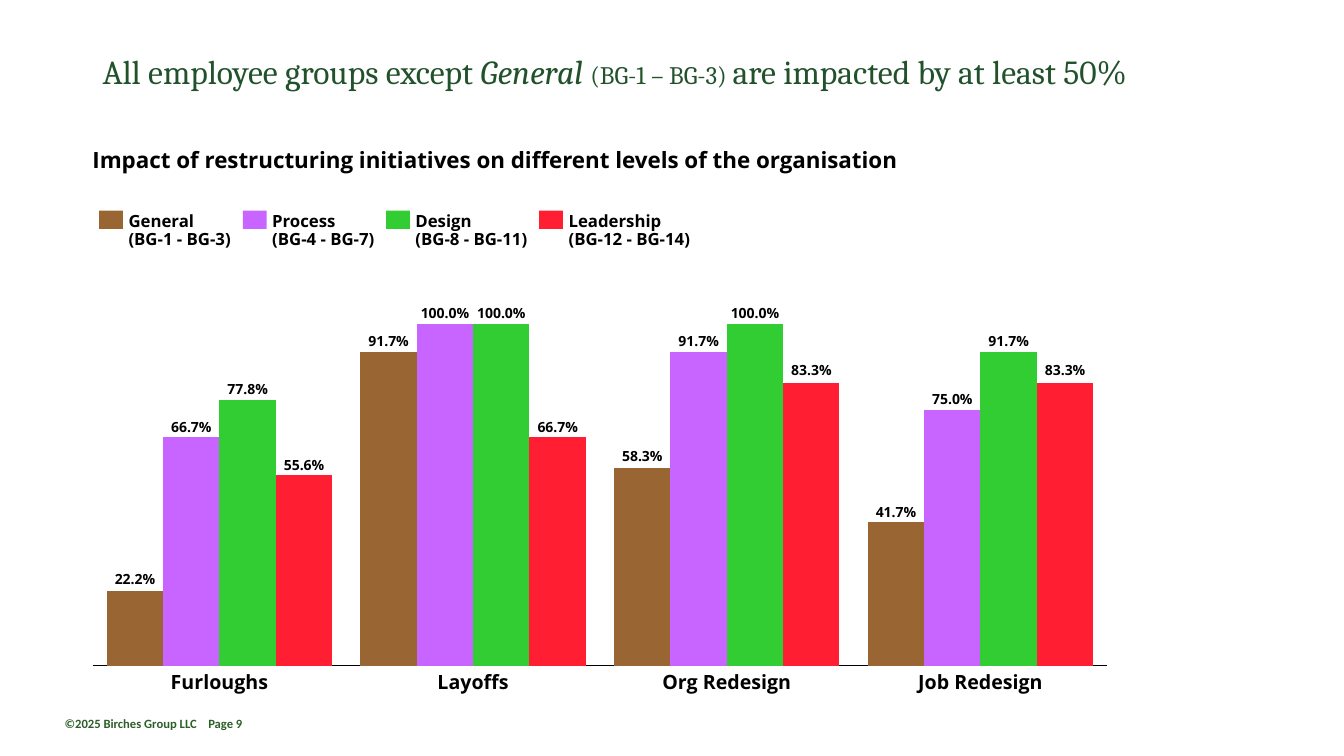
from lxml import etree
from pptx import Presentation
from pptx.chart.data import CategoryChartData
from pptx.dml.color import RGBColor
from pptx.enum.chart import XL_CHART_TYPE, XL_TICK_LABEL_POSITION, XL_TICK_MARK
from pptx.enum.shapes import MSO_SHAPE
from pptx.enum.text import MSO_ANCHOR, PP_ALIGN
from pptx.oxml.ns import qn
from pptx.util import Cm, Pt

COLUMNS = XL_CHART_TYPE.COLUMN_CLUSTERED
NO_LABELS = XL_TICK_LABEL_POSITION.NONE
NO_TICKS = XL_TICK_MARK.NONE
RECTANGLE = MSO_SHAPE.RECTANGLE
TOP, MIDDLE, BOTTOM = MSO_ANCHOR.TOP, MSO_ANCHOR.MIDDLE, MSO_ANCHOR.BOTTOM
LEFT, CENTER = PP_ALIGN.LEFT, PP_ALIGN.CENTER

COLORS = {
    "title": "22522C",
    "footer": "2C5E28",
    "text": "000000",
    "General": "996633",
    "Process": "C864FF",
    "Design": "32CD32",
    "Leadership": "FF1E32",
}
INITIATIVES = ["Furloughs", "Layoffs", "Org Redesign", "Job Redesign"]
IMPACT = {
    "General": [22.2, 91.7, 58.3, 41.7],
    "Process": [66.7, 100, 91.7, 75],
    "Design": [77.8, 100, 100, 91.7],
    "Leadership": [55.6, 66.7, 83.3, 83.3],
}
LEGEND = [
    ("General", "BG-1 - BG-3", 2.5, 2.6),
    ("Process", "BG-4 - BG-7", 6.12, 2.6),
    ("Design", "BG-8 - BG-11", 9.73, 2.9),
    ("Leadership", "BG-12 - BG-14", 13.59, 3.15),
]

CHART_BOX = (2.1, 7.95, 26.04, 9.07)
PLOT = {"x": 0.009, "y": 0.025, "w": 0.982, "h": 0.949}
GAP_WIDTH = 50


class ImpactSlide:
    def __init__(self, presentation):
        self.slide = presentation.slides.add_slide(presentation.slide_layouts[5])
        self.heading_font = "Cambria"
        self.body_font = "Open Sans"
        self.footer_font = "Calibri"

    def color(self, name):
        return RGBColor.from_string(COLORS[name])

    def title(self, box, pieces):
        shape = self.slide.shapes.title
        shape.left, shape.top, shape.width, shape.height = map(Cm, box)
        shape.text_frame.vertical_anchor = MIDDLE
        paragraph = shape.text_frame.paragraphs[0]
        paragraph.alignment = LEFT
        paragraph.line_spacing = 0.9
        paragraph.font.name = self.heading_font
        paragraph.font.color.rgb = self.color("title")
        for text, size, italic in pieces:
            run = paragraph.add_run()
            run.text = text
            run.font.size = Pt(size)
            run.font.italic = italic

    def text(self, text, box, size, align=LEFT, anchor=TOP):
        frame = self.slide.shapes.add_textbox(*map(Cm, box)).text_frame
        frame.margin_left = frame.margin_right = 0
        frame.margin_top = frame.margin_bottom = 0
        frame.vertical_anchor = anchor
        frame.word_wrap = False
        paragraph = frame.paragraphs[0]
        paragraph.text = text
        paragraph.alignment = align
        paragraph.line_spacing = 0.9
        paragraph.font.name = self.body_font
        paragraph.font.size = Pt(size)
        paragraph.font.bold = True
        paragraph.font.color.rgb = self.color("text")

    def footer(self, text, box, tab):
        frame = self.slide.shapes.add_textbox(*map(Cm, box)).text_frame
        frame.word_wrap = True
        paragraph = frame.paragraphs[0]
        paragraph.text = text
        properties = paragraph._p.get_or_add_pPr()
        tabs = etree.SubElement(properties, qn("a:tabLst"))
        etree.SubElement(tabs, qn("a:tab"), pos=str(Cm(tab)), algn="l")
        paragraph.font.name = self.footer_font
        paragraph.font.size = Pt(9)
        paragraph.font.bold = True
        paragraph.font.color.rgb = self.color("footer")

    def swatch(self, group, box):
        shape = self.slide.shapes.add_shape(RECTANGLE, *map(Cm, box))
        shape.shadow.inherit = False
        shape.fill.solid()
        shape.fill.fore_color.rgb = self.color(group)
        shape.line.fill.background()

    def chart(self, box):
        data = CategoryChartData()
        data.categories = INITIATIVES
        for group, values in IMPACT.items():
            data.add_series(group, [round(value) for value in values])
        chart = self.slide.shapes.add_chart(COLUMNS, *map(Cm, box), data).chart
        chart.has_legend = False
        chart.has_title = False
        chart.font.name = self.footer_font
        chart.font.size = Pt(10)
        chart.font.color.rgb = self.color("text")

        plot = chart.plots[0]
        plot.gap_width = GAP_WIDTH
        plot.overlap = 0
        plot.vary_by_categories = False
        for series in plot.series:
            series.format.fill.solid()
            series.format.fill.fore_color.rgb = self.color(series.name)

        value_axis = chart.value_axis
        value_axis.minimum_scale = 0
        value_axis.maximum_scale = 100
        value_axis.has_major_gridlines = False
        value_axis.visible = False
        category_axis = chart.category_axis
        category_axis.tick_label_position = NO_LABELS
        category_axis.major_tick_mark = NO_TICKS
        category_axis.format.line.width = Pt(0.75)
        category_axis.format.line.color.rgb = self.color("text")
        self.place_plot(chart)

    def place_plot(self, chart):
        area = chart._chartSpace.find(".//" + qn("c:plotArea"))
        layout = area.find(qn("c:layout"))
        if layout is None:
            layout = etree.Element(qn("c:layout"))
            area.insert(0, layout)
        manual = etree.SubElement(layout, qn("c:manualLayout"))
        settings = {"layoutTarget": "inner", "xMode": "edge", "yMode": "edge", **PLOT}
        for name, value in settings.items():
            etree.SubElement(manual, qn("c:" + name), val=str(value))


def main():
    presentation = Presentation()
    presentation.slide_width = Cm(33.87)
    presentation.slide_height = Cm(19.05)
    page = ImpactSlide(presentation)

    page.footer("©2025 Birches Group LLC\tPage 9", (1.38, 17.91, 7.67, 0.64), 3.62)
    page.title((2.33, 1, 29.21, 1.7), [
        ("All employee groups except ", 24, False),
        ("General ", 24, True),
        ("(BG-1 – BG-3) ", 18, False),
        ("are impacted by at least 50%", 24, False),
    ])
    page.text(
        "Impact of restructuring initiatives on different levels of the organisation",
        (2.33, 3.76, 29.21, 0.53), 16,
    )
    page.chart(CHART_BOX)

    left, top, width, height = CHART_BOX
    plot_left = left + PLOT["x"] * width
    plot_height = PLOT["h"] * height
    baseline = top + PLOT["y"] * height + plot_height
    category_width = PLOT["w"] * width / len(INITIATIVES)
    bar_width = category_width / (len(IMPACT) + GAP_WIDTH / 100)
    first_bar = bar_width * GAP_WIDTH / 200

    for index, initiative in enumerate(INITIATIVES):
        category_left = plot_left + index * category_width
        page.text(initiative, (category_left, 16.94, category_width, 0.53), 14, CENTER)
        for position, values in enumerate(IMPACT.values()):
            value = values[index]
            bar_left = category_left + first_bar + position * bar_width
            label_top = baseline - plot_height * value / 100 - 0.45
            page.text(f"{value:.1f}%", (bar_left, label_top, bar_width, 0.38),
                      10, CENTER, BOTTOM)

    for group, grades, swatch_left, label_width in LEGEND:
        page.swatch(group, (swatch_left, 5.31, 0.6, 0.46))
        page.text(f"{group}\n({grades})", (swatch_left + 0.74, 5.37, label_width, 0.91),
                  12, anchor=MIDDLE)

    presentation.save("out.pptx")


if __name__ == "__main__":
    main()
